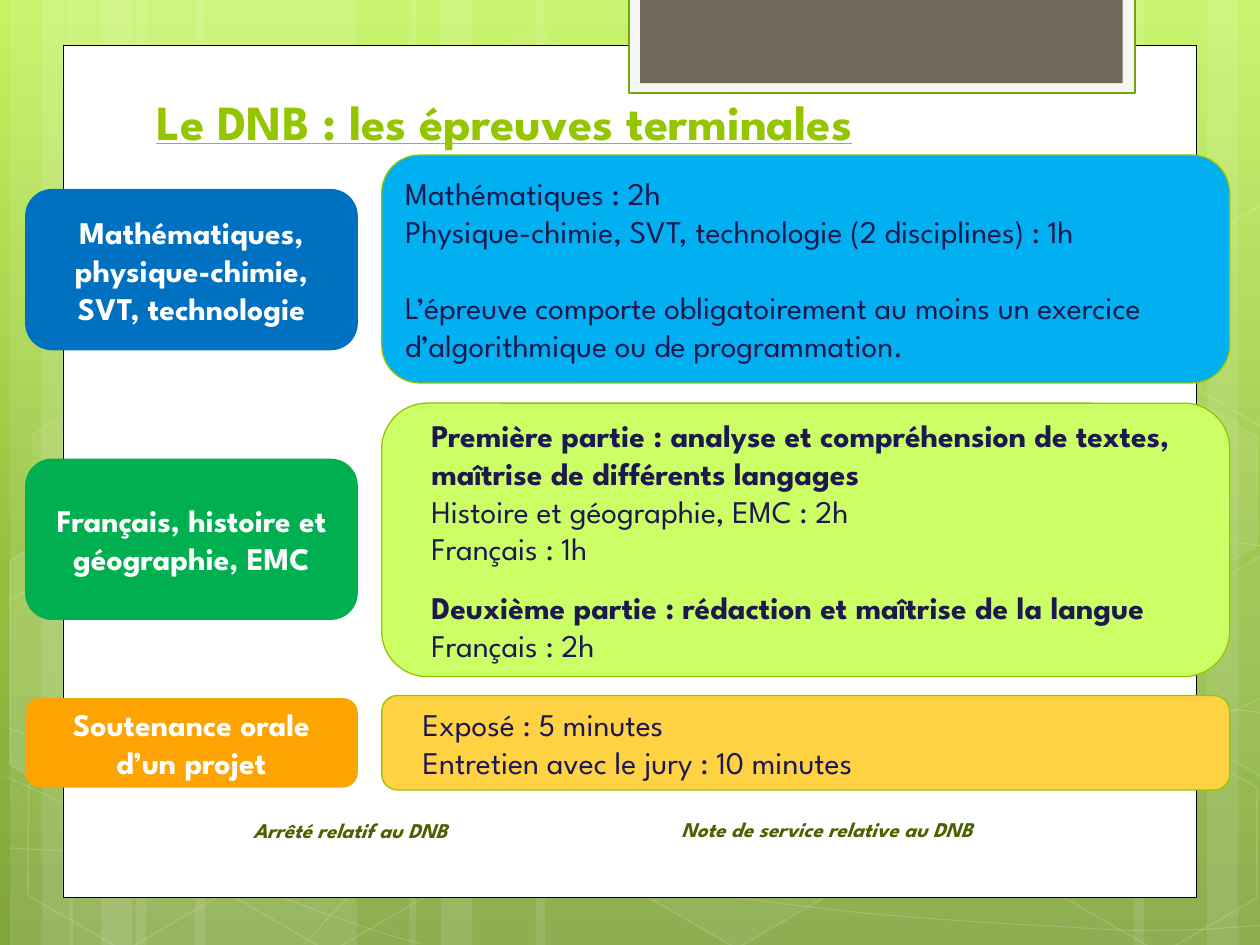
from copy import deepcopy
from typing import NamedTuple, Optional

from pptx import Presentation
from pptx.dml.color import RGBColor
from pptx.enum.shapes import MSO_SHAPE as SHAPE
from pptx.enum.text import MSO_ANCHOR as ANCHOR, MSO_AUTO_SIZE as AUTO, PP_ALIGN as ALIGN
from pptx.oxml.ns import qn
from pptx.oxml.xmlchemy import OxmlElement
from pptx.util import Inches, Pt

FONT = "League Spartan"
WHITE = RGBColor(0xFF, 0xFF, 0xFF)
BLACK = RGBColor(0x00, 0x00, 0x00)
LIME = RGBColor(0x94, 0xC6, 0x00)
NAVY = RGBColor(0x1C, 0x18, 0x50)
OLIVE = RGBColor(0x4A, 0x63, 0x00)
FRAME = RGBColor(0xF5, 0xF5, 0xF5)
FRAME_EDGE = RGBColor(0x74, 0xA5, 0x10)
TAUPE = RGBColor(0x71, 0x68, 0x5A)
BLUE, SKY = RGBColor(0x00, 0x70, 0xC0), RGBColor(0x00, 0xB0, 0xF0)
GREEN, PALE_GREEN = RGBColor(0x00, 0xB0, 0x50), RGBColor(0xCC, 0xFF, 0x66)
ORANGE, YELLOW = RGBColor(0xFD, 0xA4, 0x03), RGBColor(0xFF, 0xD2, 0x43)
BACKDROP = [(0, RGBColor(0xC3, 0xF3, 0x5F)), (0.62, RGBColor(0x93, 0xBF, 0x3F)),
            (1, RGBColor(0x81, 0xA5, 0x3E))]


class Style(NamedTuple):
    fill: Optional[RGBColor] = None
    line: Optional[RGBColor] = None
    width: float = 1
    fill_alpha: int = 100
    line_alpha: int = 100


class Para(NamedTuple):
    text: str
    bold: bool = False
    before: float = 0


class Exam(NamedTuple):
    label: str
    label_top: float
    label_height: float
    label_fill: RGBColor
    top: float
    height: float
    fill: RGBColor
    indent: float
    paras: list


class Hexagon(NamedTuple):
    left: float
    top: float
    fill_alpha: int
    line_alpha: int


class Shard(NamedTuple):
    """A hexagon cut off by the slide edge."""
    points: list
    fill_alpha: int


BANDS = [(1.08, 1.75), (0.08, 0.5), (0.33, 0.83), (1.55, 1.75), (0.55, 0.5), (0.8, 0.83),
         (7.33, 1.75), (9.58, 0.5), (9, 0.83), (4.25, 3.08), (3.25, 0.5), (3.5, 0.83)]

# Each curve is a start point followed by Bézier triples.
CURVES = [
    [(0.07, 6.73), (0.61, 6.76), (1.15, 6.79), (1.9, 6.78), (2.65, 6.77), (3.58, 6.75),
     (4.58, 6.65), (5.58, 6.55), (7, 6.36), (7.92, 6.17), (8.83, 5.98), (9.77, 5.68),
     (10.07, 5.51)],
    [(0.07, 4.77), (0.36, 4.61), (0.65, 4.46), (1.21, 4.31), (1.78, 4.16), (2.59, 3.94),
     (3.47, 3.87), (4.36, 3.8), (5.44, 3.79), (6.54, 3.87), (7.64, 3.95), (9.47, 4.26),
     (10.07, 4.34)],
    [(0.06, 6.17), (1.27, 6.72), (2.47, 7.27), (3.34, 7.49)],
    [(0.07, 5.78), (0.38, 5.89), (0.7, 6), (1.28, 6.16), (1.86, 6.31), (2.73, 6.56),
     (3.57, 6.73), (4.4, 6.9), (5.45, 7.08), (6.28, 7.18), (7.11, 7.29), (8, 7.33),
     (8.53, 7.36), (9.05, 7.4), (9.19, 7.38), (9.45, 7.38), (9.71, 7.37), (9.89, 7.35),
     (10.07, 7.34)],
    [(2.42, 7.49), (2.6, 7.29), (2.78, 7.09), (3.02, 6.91), (3.26, 6.73), (3.6, 6.53),
     (3.88, 6.39), (4.16, 6.25), (4.33, 6.19), (4.7, 6.09), (5.06, 5.99), (5.73, 5.85),
     (6.08, 5.78), (6.44, 5.71), (6.49, 5.71), (6.8, 5.69), (7.11, 5.66), (7.6, 5.63),
     (7.94, 5.62), (8.29, 5.61), (8.86, 5.62), (8.86, 5.62), (9.08, 5.62), (9.31, 5.62),
     (9.53, 5.62), (9.71, 5.63), (9.88, 5.64), (9.97, 5.65), (10.06, 5.66), (10.03, 5.65),
     (10.06, 5.66)],
]

HEXAGONS = [
    Hexagon(3.34, 0.36, 4, 8), Hexagon(4.97, 5.89, 6, 12), Hexagon(0.11, 5.91, 0, 12),
    Hexagon(0.14, 3.12, 7, 8), Hexagon(1.74, 5.92, 0, 12), Hexagon(7.53, 4.53, 10, 12),
    Hexagon(8.34, 5.93, 0, 12), Hexagon(8.34, 3.14, 7, 8),
]
SHARDS = [
    Shard([(0.08, 4.45), (0.19, 4.38), (0.96, 4.82), (0.95, 5.7), (0.2, 6.14), (0.08, 6.07)], 10),
    Shard([(9.26, 4.85), (10.01, 4.41), (10.09, 4.46), (10.09, 6.13), (10.02, 6.17),
           (9.26, 5.73)], 4),
    Shard([(9.26, 2.07), (10.01, 1.63), (10.1, 1.68), (10.09, 3.35), (10.02, 3.39),
           (9.26, 2.95)], 0),
]

EXAMS = [
    Exam("Soutenance orale d’un projet", 5.54, 0.71, ORANGE, 5.52, 0.75, YELLOW, 0.19,
         [Para("Exposé : 5 minutes"), Para("Entretien avec le jury : 10 minutes")]),
    Exam("Français, histoire et géographie, EMC", 3.64, 1.28, GREEN, 3.2, 2.17, PALE_GREEN, 0.19,
         [Para("Première partie : analyse et compréhension de textes, "
               "maîtrise de différents langages", True),
          Para("Histoire et géographie, EMC : 2h"), Para("Français : 1h"),
          Para("Deuxième partie : rédaction et maîtrise de la langue", True, 12),
          Para("Français : 2h")]),
    Exam("Mathématiques, physique-chimie, SVT, technologie", 1.5, 1.28, BLUE, 1.23, 1.81, SKY, 0,
         [Para("Mathématiques : 2h"),
          Para("Physique-chimie, SVT, technologie (2 disciplines) : 1h"),
          Para("L’épreuve comporte obligatoirement au moins un exercice "
               "d’algorithmique ou de programmation.", before=21.6)]),
]
SOURCES = [("Arrêté relatif au DNB", 1.91, 6.44, 1.85),
           ("Note de service relative au DNB", 5.31, 6.43, 2.73)]


def set_alpha(parent, percent: int) -> None:
    for clr in parent.iter(qn("a:srgbClr")):
        alpha = OxmlElement("a:alpha")
        alpha.set("val", str(percent * 1000))
        clr.append(alpha)


def paint(sp, style: Style) -> None:
    sp.shadow.inherit = False
    for part, color, alpha in ((sp.fill, style.fill, style.fill_alpha),
                               (sp.line.fill, style.line, style.line_alpha)):
        if color is None or alpha == 0:
            part.background()
            continue
        part.solid()
        part.fore_color.rgb = color
        if alpha < 100:
            spPr = sp.element.spPr
            set_alpha(spPr.find(qn("a:solidFill" if part is sp.fill else "a:ln")), alpha)
    if style.line is not None:
        sp.line.width = Pt(style.width)


def add_box(shapes, kind, box: tuple, style: Style):
    sp = shapes.add_shape(kind, *map(Inches, box))
    paint(sp, style)
    return sp


def add_outline(shapes, points: list, style: Style, close: bool):
    pts = [(Inches(x), Inches(y)) for x, y in points]
    builder = shapes.build_freeform(*pts[0])
    builder.add_line_segments(pts[1:], close=close)
    sp = builder.convert_to_shape()
    paint(sp, style)
    return sp


def add_curve(shapes, points: list, style: Style) -> None:
    """Draw an open outline whose segments, three by three, become Béziers."""
    sp = add_outline(shapes, points, style, False)
    outline = sp.element.find(".//" + qn("a:path"))
    segments = outline.findall(qn("a:lnTo"))
    for i in range(0, len(segments), 3):
        bezier = OxmlElement("a:cubicBezTo")
        for segment in segments[i:i + 3]:
            bezier.append(segment[0])
            outline.remove(segment)
        outline.append(bezier)


def write(p, text: str, color: RGBColor, size: float, **formats) -> None:
    r = p.add_run()
    r.text = text
    r.font.color.rgb = color
    for name, value in {"name": FONT, "size": Pt(size), **formats}.items():
        setattr(r.font, name, value)


def add_background(slide) -> None:
    fill = slide.background.fill
    fill.gradient()
    fill.gradient_angle = 270
    stops = slide.element.find(".//" + qn("a:gsLst"))
    stops.insert(1, deepcopy(stops[0]))
    for stop, (position, color) in zip(fill.gradient_stops, BACKDROP):
        stop.position = position
        stop.color.rgb = color

    shapes = slide.shapes
    for left, width in BANDS:
        add_box(shapes, SHAPE.RECTANGLE, (left, 0, width, 7.5), Style(WHITE, fill_alpha=10))
    for curve in CURVES:
        add_curve(shapes, curve, Style(None, WHITE, 0.5, line_alpha=20))
    for h in HEXAGONS:
        sp = add_box(shapes, SHAPE.HEXAGON, (h.left, h.top, 1.75, 1.52),
                     Style(WHITE, WHITE, 1, h.fill_alpha, h.line_alpha))
        sp.adjustments[0] = 0.285
        sp.rotation = 30
    for shard in SHARDS:
        add_outline(shapes, shard.points, Style(WHITE, WHITE, 1, shard.fill_alpha, 12), True)
    for box, style in (((0.5, 0.36, 9, 6.76), Style(WHITE, BLACK, 0.5)),
                       ((4.99, -0.02, 4.02, 0.76), Style(FRAME, FRAME_EDGE, 1.25)),
                       ((5.08, -0.02, 3.83, 0.68), Style(TAUPE))):
        add_box(shapes, SHAPE.RECTANGLE, box, style)


def add_title(slide) -> None:
    title = slide.shapes.title
    slide.shapes.element.append(title.element)  # bring in front of the white panel
    for name, value in zip(("left", "top", "width", "height"), (1.14, 0.68, 7.68, 0.56)):
        setattr(title, name, Inches(value))
    tf = title.text_frame
    tf.auto_size, tf.vertical_anchor, tf.word_wrap = AUTO.NONE, ANCHOR.BOTTOM, True
    p = tf.paragraphs[0]
    p.alignment = ALIGN.LEFT
    write(p, "Le DNB : les épreuves terminales", LIME, 28, bold=True, underline=True)


def add_card(shapes, box: tuple, style: Style, paras: list, color: RGBColor,
             align, indent: float = 0) -> None:
    tf = add_box(shapes, SHAPE.ROUNDED_RECTANGLE, box, style).text_frame
    tf.word_wrap, tf.vertical_anchor = True, ANCHOR.MIDDLE
    for i, para in enumerate(paras):
        p = tf.add_paragraph() if i else tf.paragraphs[0]
        p.alignment, p.space_before = align, Pt(para.before)
        if indent:
            p._p.get_or_add_pPr().set("marL", str(Inches(indent)))
        write(p, para.text, color, 18, bold=para.bold)


def main() -> None:
    prs = Presentation()
    prs.slide_width, prs.slide_height = Inches(10), Inches(7.5)
    slide = prs.slides.add_slide(prs.slide_layouts[5])
    shapes = slide.shapes
    add_background(slide)
    add_title(slide)
    for e in EXAMS:
        add_card(shapes, (0.2, e.label_top, 2.64, e.label_height), Style(e.label_fill),
                 [Para(e.label, True)], WHITE, ALIGN.CENTER)
    for e in EXAMS[1], EXAMS[0], EXAMS[2]:
        add_card(shapes, (3.03, e.top, 6.73, e.height), Style(e.fill, LIME, 0.75),
                 e.paras, NAVY, ALIGN.LEFT, e.indent)
    for text, left, top, width in SOURCES:
        tf = shapes.add_textbox(*map(Inches, (left, top, width, 0.3))).text_frame
        tf.word_wrap, tf.auto_size = False, AUTO.SHAPE_TO_FIT_TEXT
        write(tf.paragraphs[0], text, OLIVE, 12, bold=True, italic=True)
    prs.save("out.pptx")


if __name__ == "__main__":
    main()
